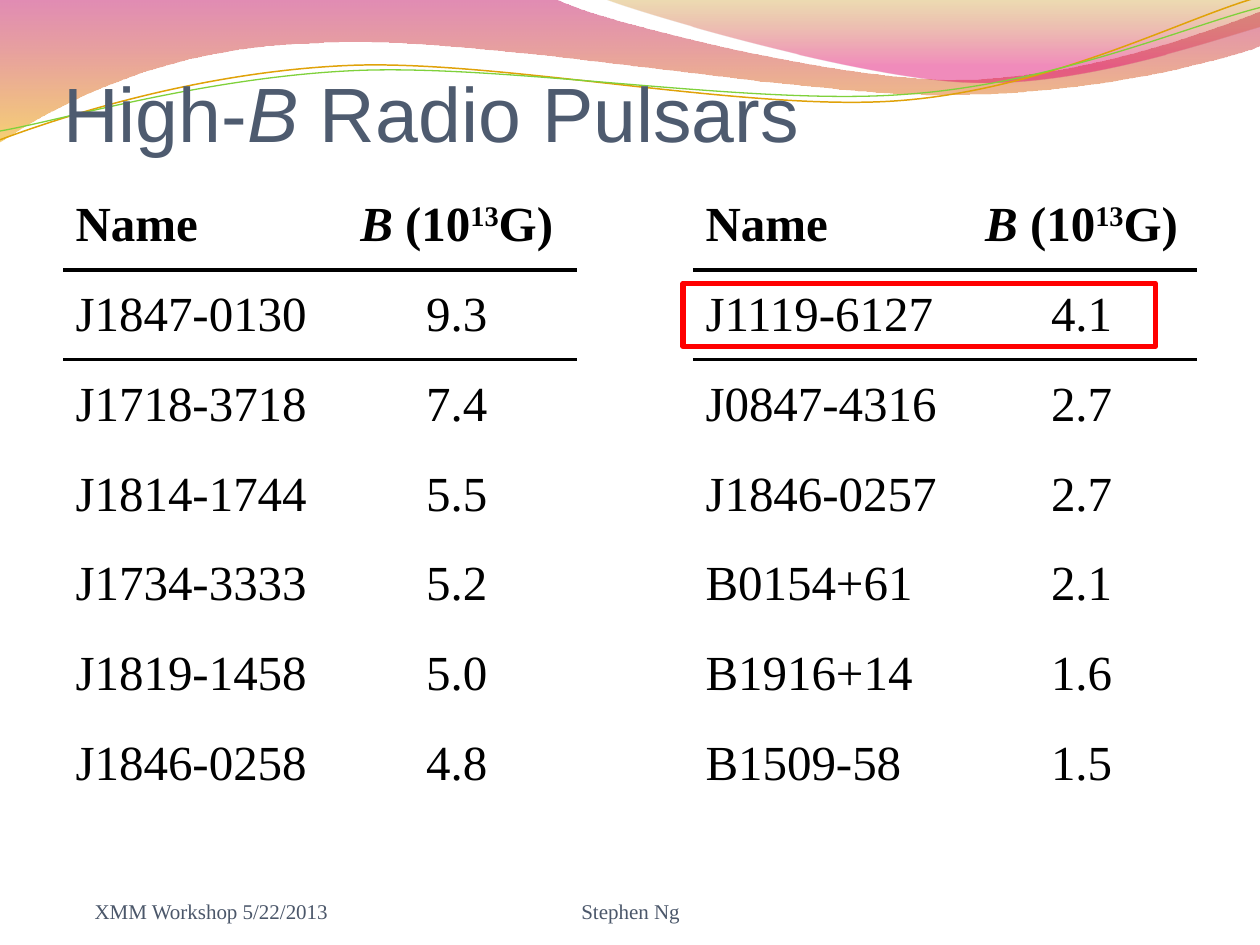
from lxml.etree import SubElement
from pptx import Presentation
from pptx.dml.color import RGBColor
from pptx.enum.shapes import MSO_SHAPE
from pptx.enum.text import MSO_ANCHOR, MSO_AUTO_SIZE, PP_ALIGN
from pptx.oxml import parse_xml
from pptx.oxml.ns import nsdecls, qn
from pptx.util import Inches, Pt

SERIF = "Times New Roman"
BLACK = "000000"
NO_STYLE = "{2D5ABB26-0587-4C30-8999-92F81FD0307C}"

FIELD_HEADING = [("B", True, False), (" (10", False, False), ("13", False, True), ("G)", False, False)]
PULSARS = [
    ("J1847-0130", "9.3", "J1119-6127", "4.1"),
    ("J1718-3718", "7.4", "J0847-4316", "2.7"),
    ("J1814-1744", "5.5", "J1846-0257", "2.7"),
    ("J1734-3333", "5.2", "B0154+61", "2.1"),
    ("J1819-1458", "5.0", "B1916+14", "1.6"),
    ("J1846-0258", "4.8", "B1509-58", "1.5"),
]
COLUMN_WIDTHS = [2.17, 1.91, 0.92, 2.17, 1.83]
TABLE_HEIGHT = 4.99

LARGE_WAVE = [
    (0, 0), (4.4, -0.01),
    (4.76, 0.17, 6.64, 0.63, 7.58, 0.63), (8.53, 0.63, 9.58, 0.26, 10, 0.09),
    (10.01, 0.36),
    (9.83, 0.44, 8.7, 0.76, 7.46, 0.75), (6.22, 0.75, 3.82, 0.28, 2.57, 0.34),
    (1.29, 0.36, 0.46, 0.83, -0.01, 1.13),
]
SMALL_WAVE = [
    (4.79, -0.01), (5.09, 0.11, 6.82, 0.62, 7.69, 0.65),
    (8.56, 0.69, 9.61, 0.32, 10, 0.21), (10, 0),
]
ORANGE_STRAND = [
    (0, 1.11), (0.48, 0.93, 1.58, 0.57, 2.77, 0.52),
    (3.95, 0.47, 5.93, 0.89, 7.13, 0.8), (8.33, 0.71, 9.38, 0.15, 9.98, -0.02),
]
GREEN_STRAND = [
    (0, 1.04), (0.47, 0.96, 1.64, 0.61, 2.83, 0.56),
    (4.03, 0.51, 5.97, 0.84, 7.17, 0.75), (8.36, 0.67, 9.41, 0.21, 10, 0.06),
]


def color(value):
    return RGBColor.from_string(value)


def add_outline(slide, segments, close):
    corners = [(Inches(segment[-2]), Inches(segment[-1])) for segment in segments]
    builder = slide.shapes.build_freeform(*corners[0])
    builder.add_line_segments(corners[1:], close=close)
    shape = builder.convert_to_shape()
    shape.shadow.inherit = False
    sides = list(shape.element.iter(qn("a:lnTo")))
    for side, segment in zip(sides, segments[1:]):
        if len(segment) == 6:
            bend_side(shape, side, segment[:4])
    return shape


def bend_side(shape, side, controls):
    side.tag = qn("a:cubicBezTo")
    for index in (0, 1):
        x, y = controls[2 * index:2 * index + 2]
        point = SubElement(side, qn("a:pt"), x=str(Inches(x) - shape.left), y=str(Inches(y) - shape.top))
        side.insert(index, point)


def add_wave(slide, segments, stops):
    shape = add_outline(slide, segments, True)
    shape.line.fill.background()
    shape.fill.gradient()
    shape.fill.gradient_angle = 270
    for stop, (position, value, opacity) in zip(shape.fill.gradient_stops, stops):
        stop.position = position
        stop.color.rgb = color(value)
        rgb = stop._gs.find(qn("a:srgbClr"))
        SubElement(rgb, qn("a:alpha"), val=str(opacity * 1000))


def add_strand(slide, segments, value, width):
    shape = add_outline(slide, segments, False)
    shape.fill.background()
    shape.line.color.rgb = color(value)
    shape.line.width = Pt(width)


def add_run(paragraph, text, font_name, size, value, italic=False):
    run = paragraph.add_run()
    run.text = text
    run.font.name = font_name
    run.font.size = Pt(size)
    run.font.color.rgb = color(value)
    run.font.italic = italic
    return run


def set_title(slide):
    title = slide.shapes.title
    title.left, title.top, title.width, title.height = map(Inches, (0.5, 0.25, 9.08, 1))
    frame = title.text_frame
    frame.auto_size = MSO_AUTO_SIZE.NONE
    frame.vertical_anchor = MSO_ANCHOR.BOTTOM
    frame.margin_left = frame.margin_right = frame.margin_bottom = 0
    frame.margin_top = Inches(0.05)
    paragraph = frame.paragraphs[0]
    paragraph.alignment = PP_ALIGN.LEFT
    for text, italic in [("High-", False), ("B", True), (" Radio Pulsars", False)]:
        add_run(paragraph, text, "Arial", 44, "4E5B6F", italic)
    title.element.getparent().append(title.element)


def add_rule(cell, side):
    cell._tc.get_or_add_tcPr().append(parse_xml(
        f'<a:{side} {nsdecls("a")} w="{Pt(2.25)}"><a:solidFill><a:srgbClr val="{BLACK}"/>'
        f'</a:solidFill><a:prstDash val="solid"/></a:{side}>'))


def fill_cell(cell, parts, bold, centered):
    cell.vertical_anchor = MSO_ANCHOR.MIDDLE
    paragraph = cell.text_frame.paragraphs[0]
    paragraph.alignment = PP_ALIGN.CENTER if centered else PP_ALIGN.LEFT
    spacing = SubElement(paragraph._p.get_or_add_pPr(), qn("a:spcBef"))
    SubElement(spacing, qn("a:spcPct"), val="20000")
    for text, italic, raised in parts:
        run = add_run(paragraph, text, SERIF, 28, BLACK, italic)
        run.font.bold = bold
        if raised:
            run.font._element.set("baseline", "30000")


def add_pulsar_table(slide):
    heading = [[("Name", False, False)], FIELD_HEADING] * 2
    rows = [heading] + [[[(text, False, False)] for text in row] for row in PULSARS]
    frame = slide.shapes.add_table(
        len(rows), len(COLUMN_WIDTHS), Inches(0.5), Inches(1.43),
        Inches(sum(COLUMN_WIDTHS)), Inches(TABLE_HEIGHT))
    table = frame.table
    table.horz_banding = table.first_row = False
    table._tbl.tblPr.find(qn("a:tableStyleId")).text = NO_STYLE
    for column, width in zip(table.columns, COLUMN_WIDTHS):
        column.width = Inches(width)
    rules = {0: "lnB", 1: "lnT"}
    for row_index, row in enumerate(rows):
        table.rows[row_index].height = Inches(TABLE_HEIGHT / len(rows))
        for column_index, parts in zip((0, 1, 3, 4), row):
            cell = table.cell(row_index, column_index)
            fill_cell(cell, parts, row_index == 0, column_index in (1, 4))
            if row_index in rules:
                add_rule(cell, rules[row_index])
        for cell in table.rows[row_index].cells:
            cell.fill.background()


def add_footer(slide, text, left, width, alignment):
    box = slide.shapes.add_textbox(Inches(left), Inches(6.83), Inches(width), Inches(0.5))
    frame = box.text_frame
    frame.word_wrap = True
    frame.vertical_anchor = MSO_ANCHOR.BOTTOM
    frame.margin_left = frame.margin_right = frame.margin_top = frame.margin_bottom = 0
    paragraph = frame.paragraphs[0]
    paragraph.alignment = alignment
    add_run(paragraph, text, SERIF, 12, "4B576A")


def add_highlight(slide):
    shape = slide.shapes.add_shape(
        MSO_SHAPE.RECTANGLE, Inches(5.42), Inches(2.25), Inches(3.75), Inches(0.5))
    shape.shadow.inherit = False
    shape.fill.background()
    shape.line.color.rgb = color("FF0000")
    shape.line.width = Pt(3)


def main():
    presentation = Presentation()
    presentation.slide_width, presentation.slide_height = Inches(10), Inches(7.5)
    slide = presentation.slides.add_slide(presentation.slide_layouts[5])
    add_wave(slide, LARGE_WAVE, [(0, "BD0059", 45), (1, "F0AB00", 55)])
    add_wave(slide, SMALL_WAVE, [(0, "C38B00", 30), (0.8, "E1006B", 45)])
    add_strand(slide, ORANGE_STRAND, "E0A209", 0.85)
    add_strand(slide, GREEN_STRAND, "7FD13B", 0.75)
    set_title(slide)
    add_pulsar_table(slide)
    add_footer(slide, "XMM Workshop 5/22/2013", 0.75, 2.08, PP_ALIGN.LEFT)
    add_footer(slide, "Stephen Ng", 3.42, 3.17, PP_ALIGN.CENTER)
    add_highlight(slide)
    presentation.save("out.pptx")


if __name__ == "__main__":
    main()
